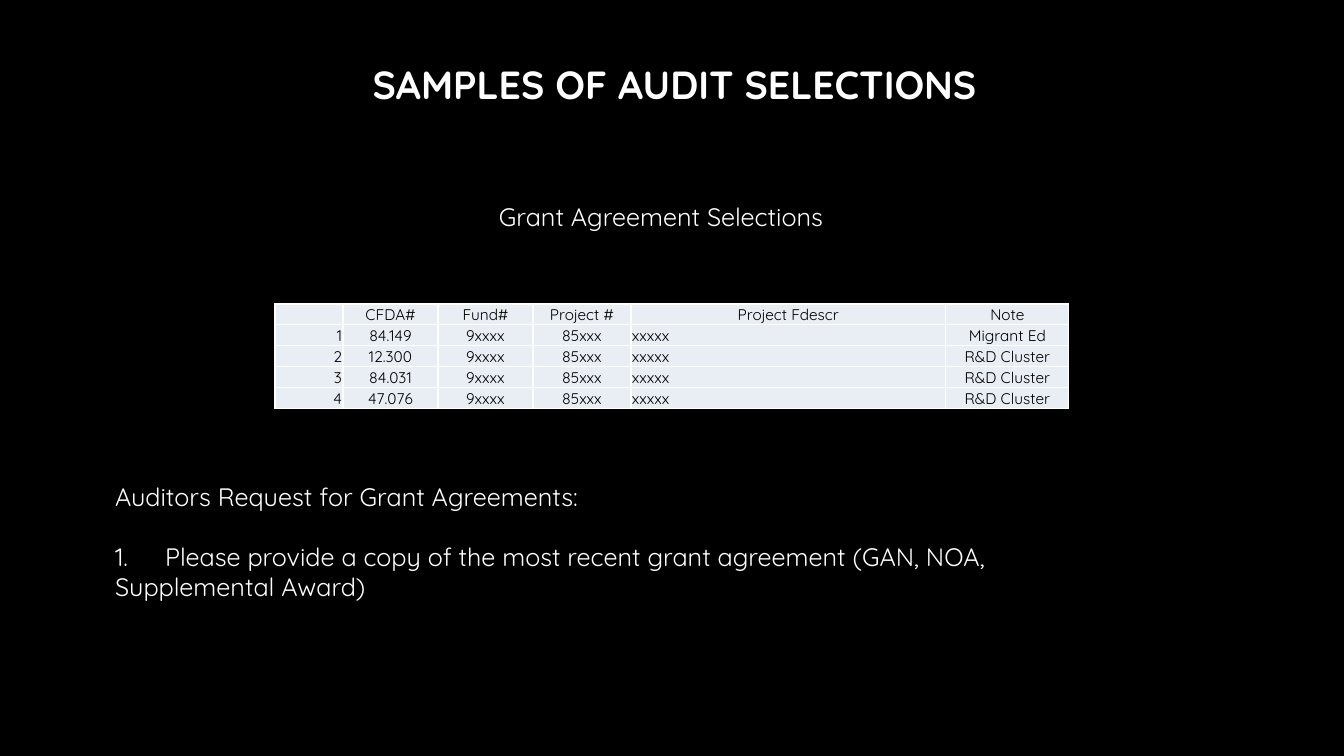
from lxml import etree
from pptx import Presentation
from pptx import util as u
from pptx.dml.color import RGBColor
from pptx.enum import text
from pptx.oxml import parse_xml
from pptx.oxml.ns import qn

COLORS = {"background": "000000", "light": "FFFFFF", "ink": "000000", "cell": "E9EDF4"}
FONT = "Quicksand"
NAMESPACE = 'xmlns:a="http://schemas.openxmlformats.org/drawingml/2006/main"'
ALIGN = text.PP_ALIGN


def px(value):
    return u.Emu(round(value * 914400 / 100.8))


def rgb(name):
    return RGBColor.from_string(COLORS[name])


class SlideBuilder:
    def __init__(self, presentation):
        self.slide = presentation.slides.add_slide(presentation.slide_layouts[1])
        background = self.slide.background.fill
        background.solid()
        background.fore_color.rgb = rgb("background")

    def place(self, shape, left, top, width, height):
        shape.left, shape.top = px(left), px(top)
        shape.width, shape.height = px(width), px(height)
        frame = shape.text_frame
        frame.word_wrap = True
        frame.auto_size = text.MSO_AUTO_SIZE.NONE
        frame.vertical_anchor = text.MSO_ANCHOR.TOP
        return frame

    def style(self, paragraph, size, color="light", align=ALIGN.LEFT, bold=False):
        paragraph.alignment = align
        paragraph.space_before = u.Pt(0)
        font = paragraph.font
        font.name, font.size, font.bold = FONT, u.Pt(size), bold
        font.color.rgb = rgb(color)

    def title(self, words, *box):
        frame = self.place(self.slide.shapes.title, *box)
        paragraph = frame.paragraphs[0]
        run = paragraph.add_run()
        run.text = words
        self.style(paragraph, 28, align=ALIGN.CENTER, bold=True)
        run.font._element.append(parse_xml(
            f'<a:effectLst {NAMESPACE}><a:outerShdw blurRad="38100" dist="38100" dir="2700000">'
            '<a:srgbClr val="FFFFFF"><a:alpha val="43000"/></a:srgbClr></a:outerShdw></a:effectLst>'))

    def body(self, lines, *box):
        frame = self.place(self.slide.placeholders[1], *box)
        for index, (words, numbered, gap) in enumerate(lines):
            paragraph = frame.paragraphs[0] if index == 0 else frame.add_paragraph()
            paragraph.text = words
            properties = paragraph._p.get_or_add_pPr()
            indent = px(50) if numbered else 0
            properties.set("marL", str(indent))
            properties.set("indent", str(-indent))
            if numbered:
                bullet = etree.SubElement(properties, qn("a:buAutoNum"))
                bullet.set("type", "arabicPeriod")
            else:
                etree.SubElement(properties, qn("a:buNone"))
            self.style(paragraph, 18)
            paragraph.space_before = u.Pt(gap)

    def label(self, words, *box):
        frame = self.place(self.slide.shapes.add_textbox(0, 0, 0, 0), *box)
        frame.text = words
        self.style(frame.paragraphs[0], 18)

    def table(self, rows, left, top, widths, heights, aligns):
        frame = self.slide.shapes.add_table(
            len(rows), len(widths), px(left), px(top), px(sum(widths)), px(sum(heights)))
        table = frame.table
        table.first_row = table.horz_banding = False
        for column, width in zip(table.columns, widths):
            column.width = px(width)
        for row, height in zip(table.rows, heights):
            row.height = px(height)
        for row_index, values in enumerate(rows):
            for column_index, value in enumerate(values):
                align = aligns[column_index] if row_index else ALIGN.CENTER
                self.cell(table.cell(row_index, column_index), value, align)

    def cell(self, cell, value, align):
        cell.margin_left = cell.margin_right = cell.margin_top = px(1)
        cell.margin_bottom = 0
        cell.vertical_anchor = text.MSO_ANCHOR.BOTTOM
        properties = cell._tc.get_or_add_tcPr()
        for side in ("lnL", "lnR", "lnT", "lnB"):
            properties.append(parse_xml(
                f'<a:{side} {NAMESPACE} w="12700"><a:solidFill>'
                f'<a:srgbClr val="{COLORS["light"]}"/></a:solidFill></a:{side}>'))
        cell.fill.solid()
        cell.fill.fore_color.rgb = rgb("cell")
        paragraph = cell.text_frame.paragraphs[0]
        paragraph.text = value
        self.style(paragraph, 11, "ink", align)
        if not value:
            etree.SubElement(paragraph._p, qn("a:endParaRPr")).set("sz", "1100")


def main():
    presentation = Presentation()
    presentation.slide_width, presentation.slide_height = px(1344), px(756)
    builder = SlideBuilder(presentation)
    builder.title("SAMPLES OF AUDIT SELECTIONS", 216, 55, 917, 105)
    builder.body([
        ("Auditors Request for Grant Agreements:", False, 0),
        ("Please provide a copy of the most recent grant agreement (GAN, NOA,", True, 21.5),
        ("Supplemental Award)", False, 0),
    ], 105, 476, 1261, 207)
    selections = [("84.149", "Migrant Ed"), ("12.300", "R&D Cluster"),
                  ("84.031", "R&D Cluster"), ("47.076", "R&D Cluster")]
    rows = [["", "CFDA#", "Fund#", "Project #", "Project Fdescr", "Note"]]
    rows += [[str(number), cfda, "9xxxx", "85xxx", "xxxxx", note]
             for number, (cfda, note) in enumerate(selections, 1)]
    builder.table(rows, 275, 304, [68, 95, 95, 98, 315, 123], [20] + [21] * 4,
                  [ALIGN.RIGHT] + [ALIGN.CENTER] * 3 + [ALIGN.LEFT, ALIGN.CENTER])
    builder.label("Grant Agreement Selections", 489, 196, 371, 40)
    presentation.save("out.pptx")


if __name__ == "__main__":
    main()
